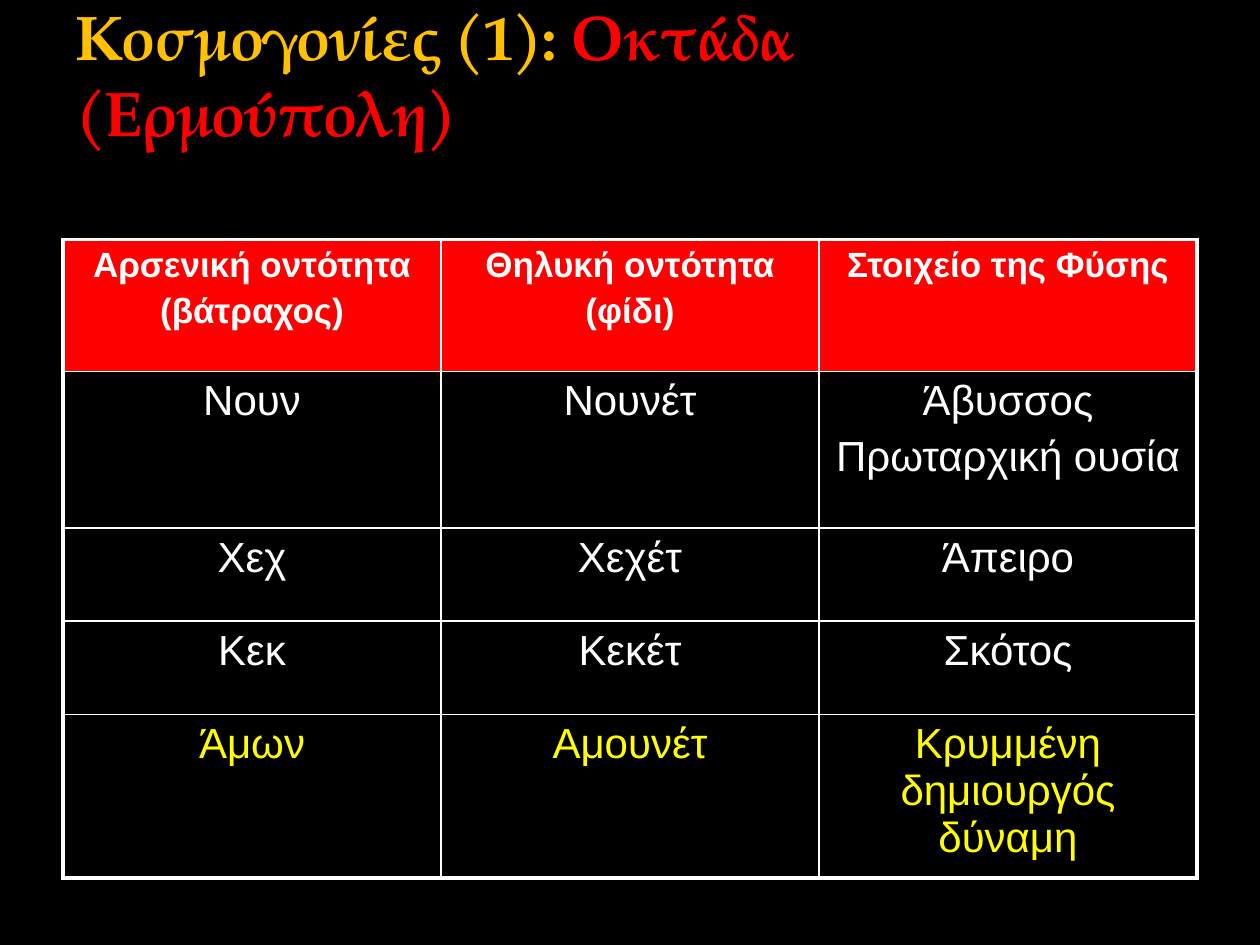
from pptx import Presentation
from pptx.dml.color import RGBColor
from pptx.enum.text import MSO_ANCHOR, MSO_AUTO_SIZE, PP_ALIGN
from pptx.oxml import parse_xml
from pptx.oxml.ns import nsdecls
from pptx.util import Inches, Pt

CENTER, LEFT = PP_ALIGN.CENTER, PP_ALIGN.LEFT
BOTTOM, NO_FIT = MSO_ANCHOR.BOTTOM, MSO_AUTO_SIZE.NONE
BLACK, WHITE, RED, GOLD, YELLOW = "000000", "FFFFFF", "FF0000", "FFC000", "FFFF00"
TITLE_FONT, BODY_FONT = "TeX Gyre Pagella", "Arial"
OUTER_LINE, INNER_LINE = 2.25, 1
TITLE_BOX = (0.5, 0.17, 9, 1.06)
TABLE_BOX = (0.5, 1.9, 9, 5.07)
ROW_HEIGHTS = (1.05, 1.24, 0.74, 0.74, 1.3)
TITLE_SPANS = (("Κοσμογονίες (1): ", GOLD), ("Οκτάδα (Ερμούπολη)", RED))
ROWS = (
    ("Αρσενική οντότητα\n(βάτραχος)", "Θηλυκή οντότητα\n(φίδι)", "Στοιχείο της Φύσης"),
    ("Νουν", "Νουνέτ", "Άβυσσος\nΠρωταρχική ουσία"),
    ("Χεχ", "Χεχέτ", "Άπειρο"),
    ("Κεκ", "Κεκέτ", "Σκότος"),
    ("Άμων", "Αμουνέτ", "Κρυμμένη δημιουργός δύναμη"),
)
HEADER = {"name": BODY_FONT, "size": Pt(20), "bold": True}
BODY = {"name": BODY_FONT, "size": Pt(24), "bold": False}
TITLE = {"name": TITLE_FONT, "size": Pt(36), "bold": True}


def colour(hex_text):
    """Turn a hex string into a colour."""
    return RGBColor.from_string(hex_text)


def set_values(target, values):
    """Set each named attribute of the target."""
    for name, value in values.items():
        setattr(target, name, value)


def style_font(font, values, hex_text):
    """Give a font its format values and colour."""
    set_values(font, values)
    font.color.rgb = colour(hex_text)


def add_title(page, box):
    """Place the two-colour title at the bottom of its box."""
    title = page.shapes.title
    set_values(title, dict(zip(("left", "top", "width", "height"), map(Inches, box))))
    frame = title.text_frame
    set_values(frame, {"word_wrap": True, "auto_size": NO_FIT, "vertical_anchor": BOTTOM,
                       "margin_right": Inches(0.2)})
    para = frame.paragraphs[0]
    para.alignment = LEFT
    for text, hex_text in TITLE_SPANS:
        span = para.add_run()
        span.text = text
        style_font(span.font, TITLE, hex_text)
        span.font._element.set("spc", "-100")


def add_borders(cell, widths):
    """Draw the four white edges of a cell."""
    properties = cell._tc.get_or_add_tcPr()
    for side, width in widths.items():
        properties.append(parse_xml(
            f'<a:ln{side} {nsdecls("a")} w="{Pt(width)}"><a:solidFill>'
            f'<a:srgbClr val="{WHITE}"/></a:solidFill></a:ln{side}>'))


def fill_cell(cell, text, values, hex_text):
    """Write centred paragraphs, spaced by a fifth of the text size."""
    cell.text = text
    for index, para in enumerate(cell.text_frame.paragraphs):
        para.alignment = CENTER
        para.space_before = Pt(round(values["size"].pt / 5)) if index else Pt(0)
        style_font(para.font, values, hex_text)
        for span in para.runs:
            style_font(span.font, values, hex_text)


def add_entity_table(page, box):
    """Place the table of entities with a red header and a yellow last row."""
    last_row, last_column = len(ROWS) - 1, len(ROWS[0]) - 1
    table = page.shapes.add_table(len(ROWS), len(ROWS[0]), *map(Inches, box)).table
    set_values(table, {"first_row": False, "horz_banding": False})
    for row, height in zip(table.rows, ROW_HEIGHTS):
        row.height = Inches(height)
    for row, texts in enumerate(ROWS):
        for column, text in enumerate(texts):
            cell = table.cell(row, column)
            outer = {"L": column == 0, "R": column == last_column,
                     "T": row == 0, "B": row == last_row}
            add_borders(cell, {side: OUTER_LINE if edge else INNER_LINE
                               for side, edge in outer.items()})
            cell.fill.solid()
            cell.fill.fore_color.rgb = colour(BLACK if row else RED)
            fill_cell(cell, text, BODY if row else HEADER,
                      YELLOW if row == last_row else WHITE)


def main():
    """Build the one-page deck."""
    deck = Presentation()
    set_values(deck, {"slide_width": Inches(10), "slide_height": Inches(7.5)})
    page = deck.slides.add_slide(deck.slide_layouts[5])
    page.background.fill.solid()
    page.background.fill.fore_color.rgb = colour(BLACK)
    add_title(page, TITLE_BOX)
    add_entity_table(page, TABLE_BOX)
    deck.save("out.pptx")


if __name__ == "__main__":
    main()
